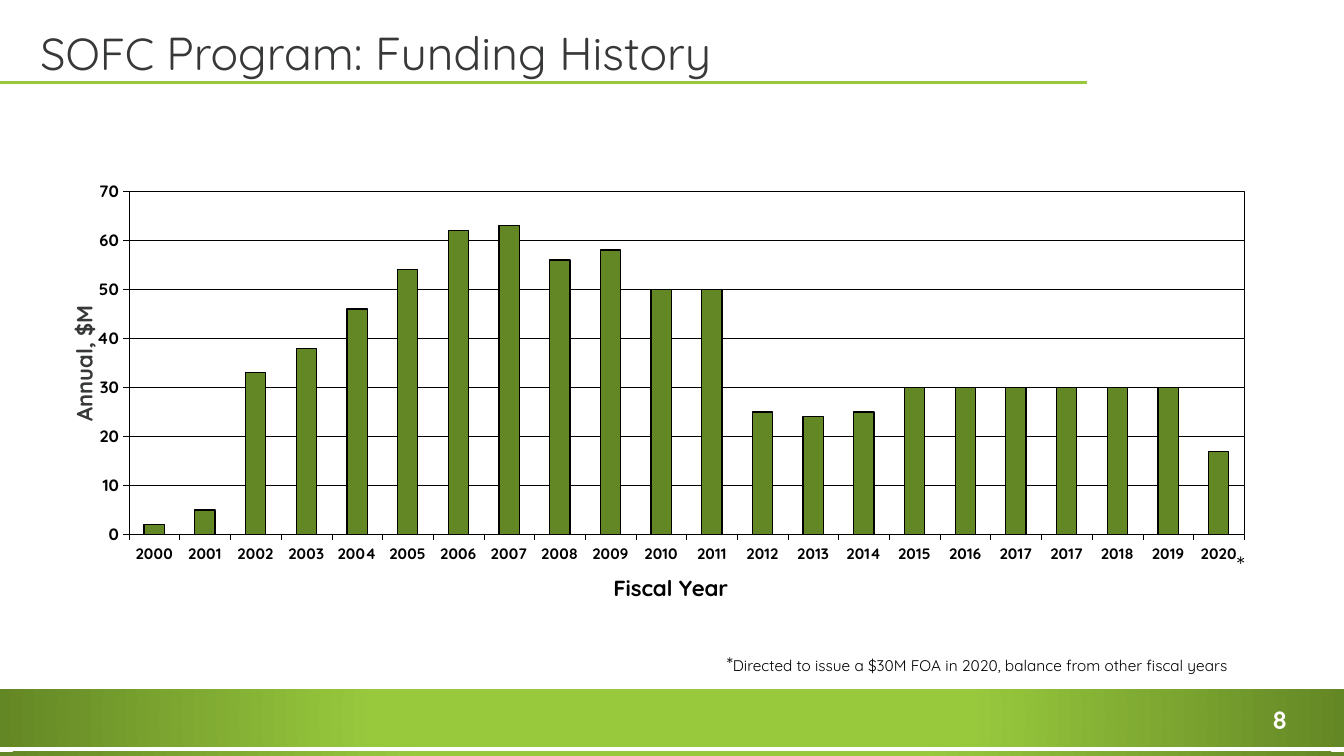
from lxml import etree
from pptx import Presentation
from pptx.chart.data import CategoryChartData
from pptx.dml.color import RGBColor
from pptx.enum.chart import XL_CHART_TYPE, XL_TICK_LABEL_POSITION, XL_TICK_MARK
from pptx.enum.shapes import MSO_CONNECTOR, MSO_SHAPE
from pptx.enum.text import MSO_ANCHOR, MSO_AUTO_SIZE, PP_ALIGN
from pptx.oxml import parse_xml
from pptx.oxml.ns import nsdecls, qn
from pptx.util import Inches, Pt

COLUMNS = XL_CHART_TYPE.COLUMN_CLUSTERED
LABELS_LOW = XL_TICK_LABEL_POSITION.LOW
TICK_OUT, TICK_NONE = XL_TICK_MARK.OUTSIDE, XL_TICK_MARK.NONE
STRAIGHT, RECTANGLE = MSO_CONNECTOR.STRAIGHT, MSO_SHAPE.RECTANGLE
BOTTOM, LEFT = MSO_ANCHOR.BOTTOM, PP_ALIGN.LEFT
NO_FIT, GROW = MSO_AUTO_SIZE.NONE, MSO_AUTO_SIZE.SHAPE_TO_FIT_TEXT

FONT = "Quicksand"
COLORS = {
    "lime": "98C93D",
    "olive": "648725",
    "ink": "373838",
    "black": "000000",
    "white": "FFFFFF",
}
YEARS = [*range(2000, 2018), *range(2017, 2021)]
FUNDING = [2, 5, 33, 38, 46, 54, 62, 63, 56, 58, 50, 50,
           25, 24, 25, 30, 30, 30, 30, 30, 30, 17]


class FundingSlide:
    """Holds the deck style and the slide being built."""

    def __init__(self, deck):
        self.slide = deck.slides.add_slide(deck.slide_layouts[5])
        self.shapes = self.slide.shapes

    def color(self, name):
        return RGBColor.from_string(COLORS[name])

    def style(self, font, size, color="black", bold=False):
        font.name, font.size, font.bold = FONT, Pt(size), bold
        font.color.rgb = self.color(color)

    def outline(self, line, width, color="black"):
        line.color.rgb = self.color(color)
        line.width = Pt(width)

    def add_runs(self, frame, runs, color, bold=False):
        paragraph = frame.paragraphs[0]
        self.style(paragraph.font, runs[0][1], color, bold)
        for words, size in runs:
            run = paragraph.add_run()
            run.text = words
            if len(runs) > 1:
                run.font.size = Pt(size)
        return paragraph

    def title(self, box, runs):
        heading = self.shapes.title
        heading.left, heading.top, heading.width, heading.height = map(Inches, box)
        frame = heading.text_frame
        frame.vertical_anchor, frame.auto_size = BOTTOM, NO_FIT
        paragraph = self.add_runs(frame, runs, "ink")
        paragraph.alignment, paragraph.line_spacing = LEFT, 0.9

    def text(self, box, runs, color="black", bold=False):
        frame = self.shapes.add_textbox(*map(Inches, box)).text_frame
        frame.word_wrap, frame.auto_size = False, GROW
        self.add_runs(frame, runs, color, bold)

    def rule(self, left, right, y):
        rule = self.shapes.add_connector(
            STRAIGHT, Inches(left), Inches(y), Inches(right), Inches(y))
        self.outline(rule.line, 1.75, "lime")
        etree.SubElement(rule.element.spPr, qn("a:effectLst"))

    def band(self, box, lime_until):
        band = self.shapes.add_shape(RECTANGLE, *map(Inches, box))
        band.shadow.inherit = False
        band.line.fill.background()
        band.fill.gradient()
        stops = zip(band.fill.gradient_stops, (("lime", lime_until), ("olive", 1)))
        for stop, (name, position) in stops:
            stop.color.rgb, stop.position = self.color(name), position
        linear = band.element.spPr.find(".//" + qn("a:lin"))
        linear.getparent().replace(linear, parse_xml(
            f'<a:path {nsdecls("a")} path="circle">'
            '<a:fillToRect l="50000" t="50000" r="50000" b="50000"/></a:path>'))

    def place(self, parent, x, y, size=None):
        layout = parent.find(qn("c:layout"))
        if layout is None:
            layout = etree.Element(qn("c:layout"))
            parent.insert(0, layout)
        manual = etree.SubElement(layout, qn("c:manualLayout"))
        settings = [("xMode", "edge"), ("yMode", "edge"), ("x", x), ("y", y)]
        if size:
            settings.insert(0, ("layoutTarget", "inner"))
            settings += zip("wh", size)
        for tag, value in settings:
            etree.SubElement(manual, qn("c:" + tag)).set("val", str(value))

    def axis(self, axis, name, name_size, name_color, name_at, label_size):
        axis.major_tick_mark, axis.minor_tick_mark = TICK_OUT, TICK_NONE
        self.style(axis.tick_labels.font, label_size, bold=True)
        self.outline(axis.format.line, 0.22)
        paragraph = axis.axis_title.text_frame.paragraphs[0]
        paragraph.add_run().text = name
        self.style(paragraph.font, name_size, name_color, True)
        self.place(axis.axis_title.element, *name_at)

    def chart(self, box):
        data = CategoryChartData(number_format="#,##0")
        data.categories = map(str, YEARS)
        data.add_series("Series 1", FUNDING)
        chart = self.shapes.add_chart(COLUMNS, *map(Inches, box), data).chart
        chart.has_legend = chart.has_title = False
        self.style(chart.font, 16, bold=True)

        plot = chart.plots[0]
        plot.gap_width, plot.vary_by_categories = 150, False
        bars = plot.series[0].format
        bars.fill.solid()
        bars.fill.fore_color.rgb = self.color("olive")
        self.outline(bars.line, 0.9)

        years, dollars = chart.category_axis, chart.value_axis
        self.axis(years, "Fiscal Year", 16, "black", (0.443, 0.93), 11)
        self.axis(dollars, "Annual, $M", 16, "ink", (0.016, 0.32), 12)
        years.tick_label_position = LABELS_LOW
        dollars.minimum_scale, dollars.maximum_scale = 0, 70
        dollars.major_unit = 10
        dollars.tick_labels.number_format = "#,##0"
        dollars.tick_labels.number_format_is_linked = False
        self.outline(dollars.major_gridlines.format.line, 0.22)

        area = chart.element.find(".//" + qn("c:plotArea"))
        self.place(area, 0.067, 0.06, (0.873, 0.793))
        area.append(parse_xml(
            f'<c:spPr {nsdecls("c", "a")}>'
            f'<a:solidFill><a:srgbClr val="{COLORS["white"]}"/></a:solidFill>'
            f'<a:ln w="2800"><a:solidFill><a:srgbClr val="{COLORS["black"]}"/>'
            '</a:solidFill></a:ln></c:spPr>'))


def main():
    deck = Presentation()
    deck.slide_width, deck.slide_height = Inches(13.33), Inches(7.5)
    page = FundingSlide(deck)
    page.rule(0, 10.78, 0.82)
    page.band((0, 6.84, 13.33, 0.57), 0.44)
    page.band((0, 7.46, 13.33, 0.05), 0.37)
    page.text((12.52, 6.94, 0.48, 0.4), [("8", 18)], "white", True)
    page.chart((0.43, 1.64, 12.67, 4.39))
    page.title((0.3, 0.19, 12.67, 0.66),
               [("SOFC ", 32), ("Program: Funding History", 33)])
    page.text((7.11, 6.42, 5.42, 0.34), [
        ("*", 14),
        ("Directed to issue a $30M FOA in 2020, balance from other fiscal years", 11),
    ])
    page.text((12.17, 5.4, 0.33, 0.4), [("*", 18)])
    deck.save("out.pptx")


if __name__ == "__main__":
    main()
